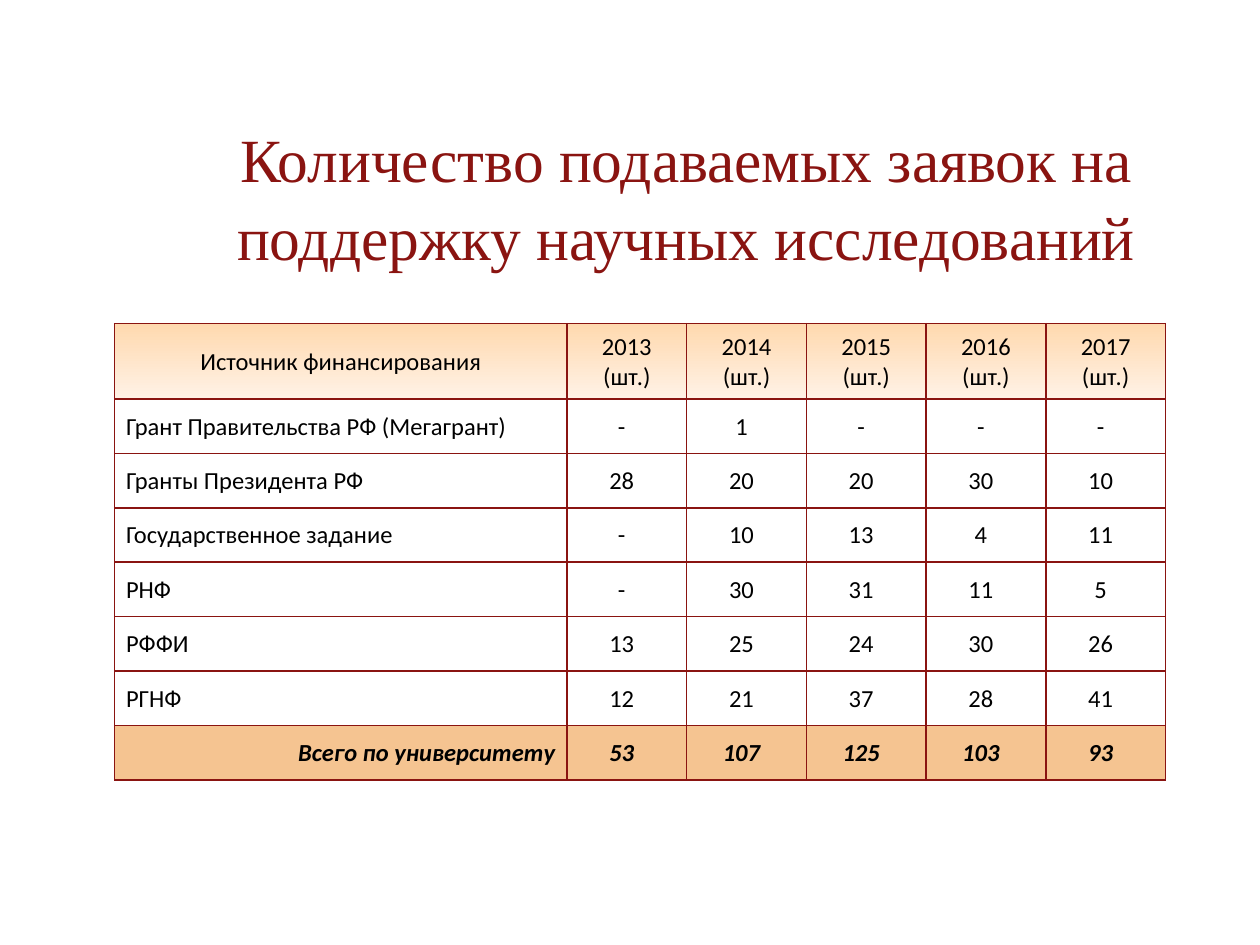
from dataclasses import dataclass
from typing import NamedTuple

from pptx import Presentation
from pptx.dml.color import RGBColor as Color
from pptx.enum.text import MSO_ANCHOR as Anchor, PP_ALIGN as Align
from pptx.oxml.ns import qn
from pptx.util import Pt
from lxml.etree import SubElement


@dataclass(frozen=True)
class Theme:
    title_font: str = "Times New Roman"
    table_font: str = "Calibri"
    title_size: float = 35.1
    table_size: float = 14
    accent: str = "8A1411"
    text: str = "000000"
    header_fill: tuple[str, str] = ("FFD9AF", "FFF2E6")
    total_fill: str = "F5C491"
    border_width: float = 1


class Box(NamedTuple):
    left: float
    top: float
    width: float
    height: float


class CellStyle(NamedTuple):
    align: Align
    margin_left: float = 0.7
    margin_right: float = 6.5
    fill: tuple[str, ...] = ()
    bold: bool = False


class FundingRow(NamedTuple):
    source: str
    counts: tuple[str, ...]
    label_style: CellStyle
    count_style: CellStyle
    height: float = 31.1


THEME = Theme()
TITLE = "Количество подаваемых заявок на поддержку научных исследований"
TITLE_BOX = Box(105, 66.2, 574, 90)
TABLE_BOX = Box(65.5, 185, 600.5, 260.7)
SOURCE_WIDTH, YEAR_WIDTH = 258.5, 68.4

HEADER = CellStyle(Align.CENTER, margin_right=0.7, fill=THEME.header_fill)
LABEL = CellStyle(Align.LEFT, margin_left=6.5, margin_right=0.7)
COUNT = CellStyle(Align.CENTER)
TOTAL_LABEL = CellStyle(Align.RIGHT, fill=(THEME.total_fill,), bold=True)
TOTAL = CellStyle(Align.CENTER, fill=(THEME.total_fill,), bold=True)

SOURCES = {
    "Грант Правительства РФ (Мегагрант)": "- 1 - - -",
    "Гранты Президента РФ": "28 20 20 30 10",
    "Государственное задание": "- 10 13 4 11",
    "РНФ": "- 30 31 11 5",
    "РФФИ": "13 25 24 30 26",
    "РГНФ": "12 21 37 28 41",
}
YEARS = tuple(f"{year}\n(шт.)" for year in range(2013, 2018))
ROWS = [
    FundingRow("Источник финансирования", YEARS, HEADER, HEADER, 43),
    *(FundingRow(source, tuple(counts.split()), LABEL, COUNT) for source, counts in SOURCES.items()),
    FundingRow("Всего по университету", ("53", "107", "125", "103", "93"), TOTAL_LABEL, TOTAL),
]


def apply_format(target: object, values: dict[str, object]) -> None:
    for name, value in values.items():
        setattr(target, name, value)


def format_font(font: object, name: str, size: float, color: str, bold: bool = False) -> None:
    apply_format(font, {"name": name, "size": Pt(size), "bold": bold, "italic": bold})
    font.color.rgb = Color.from_string(color)


def add_title(slide: object) -> None:
    frame = slide.shapes.add_textbox(*map(Pt, TITLE_BOX)).text_frame
    margins = {f"margin_{side}": Pt(3.6) for side in ("left", "top", "right", "bottom")}
    apply_format(frame, {"word_wrap": True, "vertical_anchor": Anchor.MIDDLE, **margins})
    paragraph = frame.paragraphs[0]
    apply_format(paragraph, {"text": TITLE, "alignment": Align.CENTER, "line_spacing": 1.06})
    format_font(paragraph.runs[0].font, THEME.title_font, THEME.title_size, THEME.accent)


def fill_cell(cell: object, colors: tuple[str, ...]) -> None:
    if len(colors) > 1:
        cell.fill.gradient()
        cell.fill.gradient_angle = 270
        for stop, color in zip(cell.fill.gradient_stops, colors):
            stop.color.rgb = Color.from_string(color)
    elif colors:
        cell.fill.solid()
        cell.fill.fore_color.rgb = Color.from_string(colors[0])
    else:
        cell.fill.background()


def add_borders(cell: object) -> None:
    properties = cell._tc.get_or_add_tcPr()
    for position, edge in enumerate(("lnL", "lnR", "lnT", "lnB")):
        line = SubElement(properties, qn(f"a:{edge}"), w=str(Pt(THEME.border_width)))
        solid = SubElement(line, qn("a:solidFill"))
        SubElement(solid, qn("a:srgbClr"), val=THEME.accent)
        properties.insert(position, line)


def write_cell(cell: object, text: str, style: CellStyle) -> None:
    apply_format(cell, {
        "text": text,
        "vertical_anchor": Anchor.MIDDLE,
        "margin_left": Pt(style.margin_left),
        "margin_right": Pt(style.margin_right),
        "margin_top": Pt(0.7),
        "margin_bottom": Pt(0),
    })
    for paragraph in cell.text_frame.paragraphs:
        paragraph.alignment = style.align
        for run in paragraph.runs:
            format_font(run.font, THEME.table_font, THEME.table_size, THEME.text, style.bold)
    fill_cell(cell, style.fill)
    add_borders(cell)


def add_funding_table(slide: object) -> None:
    table = slide.shapes.add_table(len(ROWS), len(YEARS) + 1, *map(Pt, TABLE_BOX)).table
    apply_format(table, {"first_row": False, "horz_banding": False})
    for index, column in enumerate(table.columns):
        column.width = Pt(YEAR_WIDTH if index else SOURCE_WIDTH)
    for table_row, row in zip(table.rows, ROWS):
        table_row.height = Pt(row.height)
        for index, text in enumerate((row.source, *row.counts)):
            write_cell(table_row.cells[index], text, row.count_style if index else row.label_style)


def main() -> None:
    """Build the slide on applications for research funding."""
    presentation = Presentation()
    apply_format(presentation, {"slide_width": Pt(720), "slide_height": Pt(540)})
    slide = presentation.slides.add_slide(presentation.slide_layouts[6])
    add_title(slide)
    add_funding_table(slide)
    presentation.save("out.pptx")


if __name__ == "__main__":
    main()
